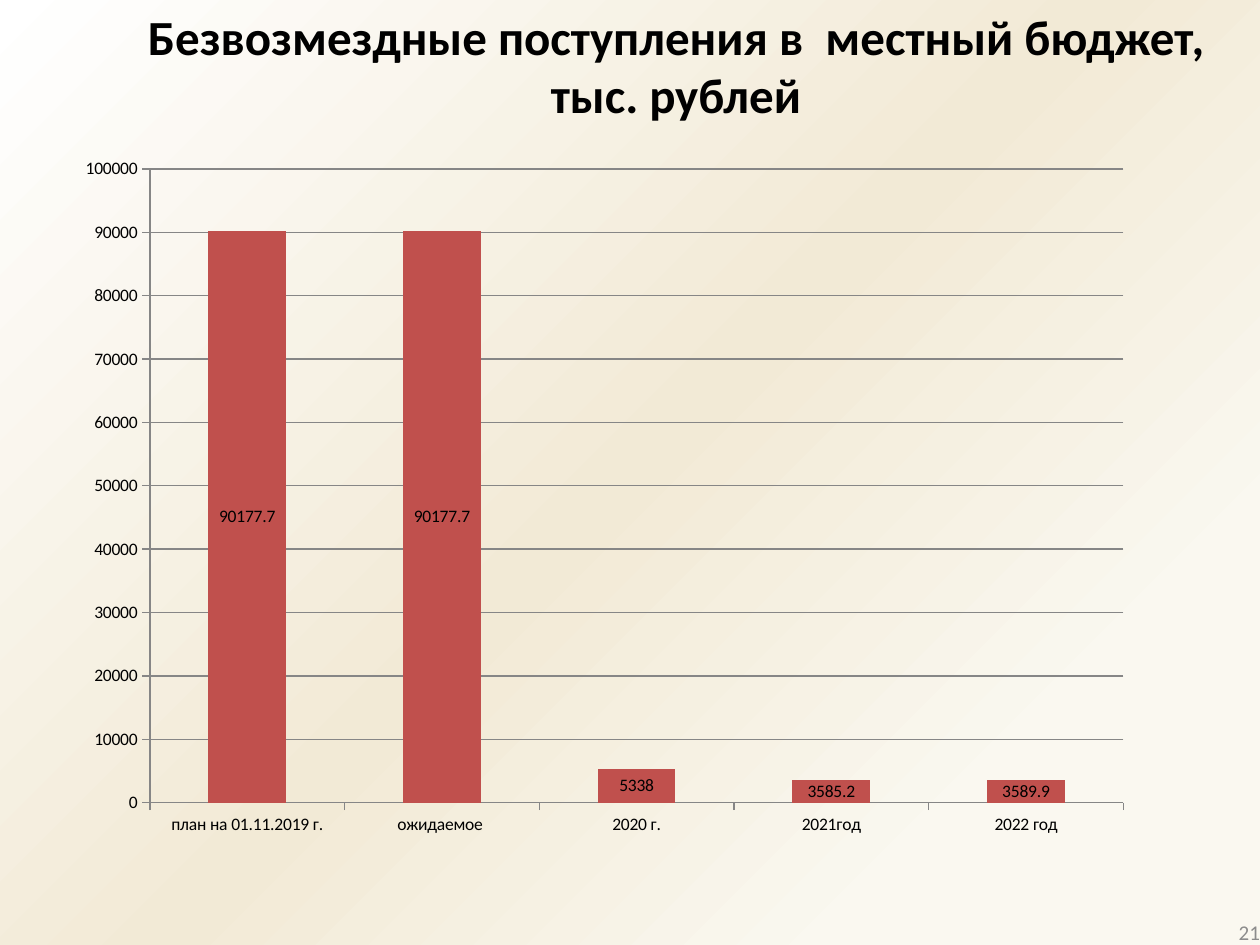
"""Build the slide on grants to the local budget."""
import pptx
import pptx.util
import pptx.oxml
import pptx.chart.data
import pptx.dml.color
import pptx.enum.chart
import pptx.enum.text

TITLE = "Безвозмездные поступления в  местный бюджет, тыс. рублей"
NUMBER = "21"
CATEGORIES = ["план на 01.11.2019 г.", "ожидаемое ", "2020 г.", "2021год", "2022 год"]
SERIES = [
    ("Series 1", [None, 0, None, None, None], "4F81BD"),
    ("Series 2", [90177.7, 90177.7, 5338, 3585.2, 3589.9], "C0504D"),
]
BOXES = {
    "title": (92, 0, 1168, 65),
    "number": (966, 919, 294, 26),
    "chart": (64, 145, 1081, 704),
}
THEME = {
    "font": "Calibri", "text": "000000", "muted": "8C8C8C", "grid": "868686",
    "title": 28, "number": 12, "chart": 10,
    "background": [(0, "FAF8F0"), (19, "FAF8F0"), (50, "F2EAD6"), (100, "FFFFFF")],
}
SCALE = 914400 // 126


def px(*values):
    return [pptx.util.Emu(v * SCALE) for v in values]


def rgb(value):
    return pptx.dml.color.RGBColor.from_string(value)


def assign(obj, values):
    for name, value in values.items():
        setattr(obj, name, value)


def style_font(font, size, color, bold=False):
    assign(font, {"name": THEME["font"], "size": pptx.util.Pt(size), "bold": bold})
    font.color.rgb = rgb(color)


def write(shape, box, text, size, color, align, anchor, margins, bold=False):
    assign(shape, dict(zip(("left", "top", "width", "height"), px(*box))))
    tf = shape.text_frame
    assign(tf, {"word_wrap": True, "vertical_anchor": anchor,
                "auto_size": pptx.enum.text.MSO_AUTO_SIZE.NONE})
    assign(tf, dict(zip(("margin_left", "margin_top", "margin_right", "margin_bottom"),
                        px(*margins))))
    p = tf.paragraphs[0]
    p.alignment = align
    r = p.add_run()
    r.text = text
    style_font(r.font, size, color, bold)


def paint_background(s):
    fill = s.background.fill
    fill.gradient()
    grad = s.element.cSld.bg.bgPr.find(pptx.oxml.ns.qn("a:gradFill"))
    stops = "".join(f'<a:gs pos="{pos * 1000}"><a:srgbClr val="{color}"/></a:gs>'
                    for pos, color in THEME["background"])
    grad.getparent().replace(grad, pptx.oxml.parse_xml(
        f'<a:gradFill {pptx.oxml.ns.nsdecls("a")} rotWithShape="1"><a:gsLst>{stops}</a:gsLst>'
        '<a:path path="circle"><a:fillToRect l="100000" t="100000"/></a:path></a:gradFill>'))


def add_budget_chart(s):
    data = pptx.chart.data.CategoryChartData()
    data.categories = CATEGORIES
    for name, values, _ in SERIES:
        data.add_series(name, values)
    kind = pptx.enum.chart.XL_CHART_TYPE.COLUMN_STACKED
    chart = s.shapes.add_chart(kind, *px(*BOXES["chart"]), data).chart
    assign(chart, {"has_legend": False, "has_title": False})
    style_font(chart.font, THEME["chart"], THEME["text"])
    plot = chart.plots[0]
    assign(plot, {"gap_width": 150, "overlap": 100, "vary_by_categories": False})
    for series, (_, _, color) in zip(plot.series, SERIES):
        series.format.fill.solid()
        series.format.fill.fore_color.rgb = rgb(color)
    labels = plot.series[1].data_labels
    assign(labels, {"show_value": True,
                    "position": pptx.enum.chart.XL_LABEL_POSITION.CENTER})
    style_font(labels.font, THEME["chart"], THEME["text"])
    tick = pptx.enum.chart.XL_TICK_MARK
    for axis in (chart.category_axis, chart.value_axis):
        assign(axis, {"major_tick_mark": tick.OUTSIDE, "minor_tick_mark": tick.NONE})
        axis.format.line.color.rgb = rgb(THEME["grid"])
    assign(chart.value_axis, {"minimum_scale": 0, "maximum_scale": 100000,
                              "major_unit": 10000, "has_major_gridlines": True})
    chart.value_axis.major_gridlines.format.line.color.rgb = rgb(THEME["grid"])


def main():
    prs = pptx.Presentation()
    assign(prs, dict(zip(("slide_width", "slide_height"), px(1260, 945))))
    s = prs.slides.add_slide(prs.slide_layouts[5])
    paint_background(s)
    align, anchor = pptx.enum.text.PP_ALIGN, pptx.enum.text.MSO_ANCHOR
    write(s.shapes.title, BOXES["title"], TITLE, THEME["title"], THEME["text"],
          align.CENTER, anchor.TOP, (13, 6, 13, 6), True)
    write(s.shapes.add_textbox(0, 0, 0, 0), BOXES["number"], NUMBER, THEME["number"],
          THEME["muted"], align.RIGHT, anchor.MIDDLE, (0, 0, 0, 0))
    add_budget_chart(s)
    prs.save("out.pptx")


if __name__ == "__main__":
    main()
